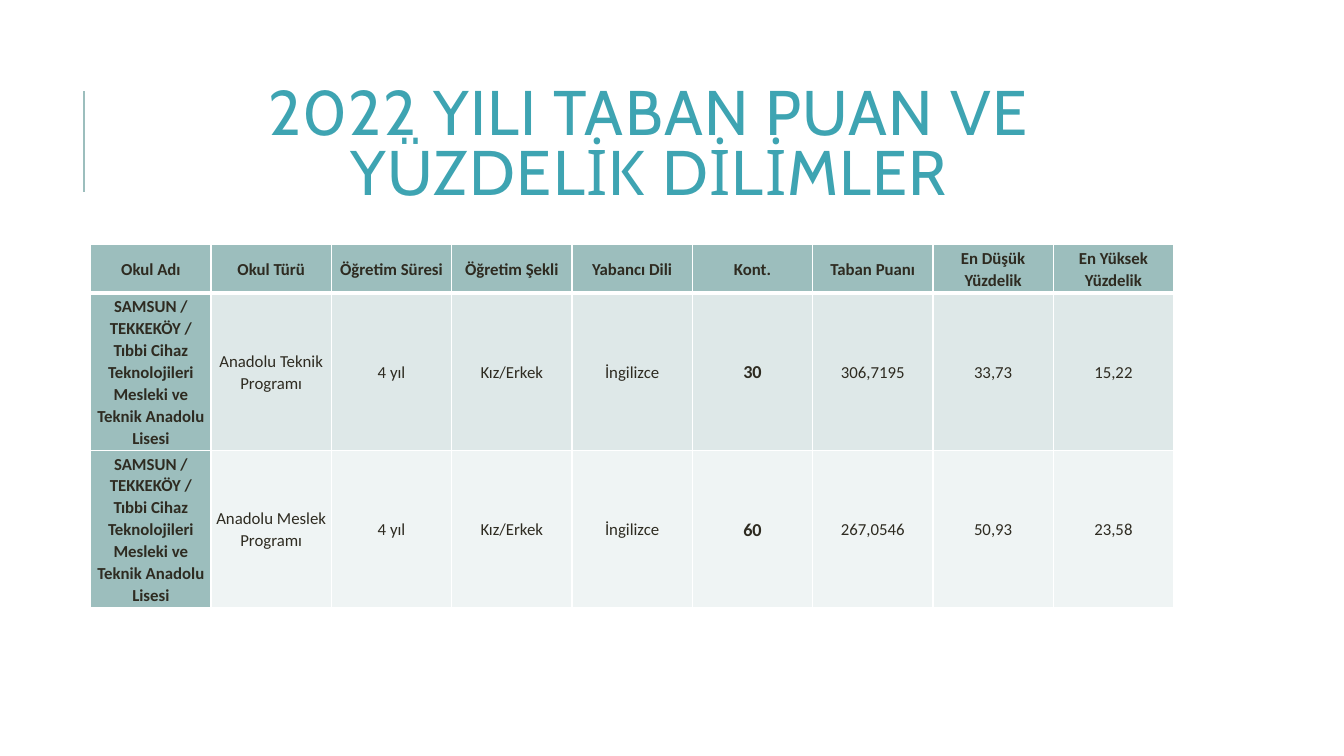
from lxml.etree import SubElement
from pptx import Presentation
from pptx.dml.color import RGBColor
from pptx.enum.shapes import MSO_CONNECTOR
from pptx.enum.text import MSO_ANCHOR, MSO_AUTO_SIZE, PP_ALIGN
from pptx.oxml.ns import qn
from pptx.util import Inches, Pt

COLORS = {
    "title": "3EA4B2",
    "accent": "9CBEBD",
    "text": "2E2B21",
    "border": "FFFFFF",
    "odd_row": "DEE8E8",
    "even_row": "EFF4F4",
}
SCHOOL = "SAMSUN / TEKKEKÖY / Tıbbi Cihaz Teknolojileri Mesleki ve Teknik Anadolu Lisesi"
ROWS = [
    ["Okul Adı", "Okul Türü", "Öğretim Süresi", "Öğretim Şekli", "Yabancı Dili",
     "Kont.", "Taban Puanı", "En Düşük Yüzdelik", "En Yüksek Yüzdelik"],
    [SCHOOL, "Anadolu Teknik Programı", "4 yıl", "Kız/Erkek", "İngilizce",
     "30", "306,7195", "33,73", "15,22"],
    [SCHOOL, "Anadolu Meslek Programı", "4 yıl", "Kız/Erkek", "İngilizce",
     "60", "267,0546", "50,93", "23,58"],
]
ROW_HEIGHTS = [0.49, 1.55, 1.55]
TABLE_WIDTH = 10.74
QUOTA_COLUMN = 5


def color(name):
    return RGBColor.from_string(COLORS[name])


def add_span(para, text, font_name, size, color_name, bold=False):
    span = para.add_run()
    span.text = text
    span.font.name = font_name
    span.font.size = Pt(size)
    span.font.bold = bold
    span.font.color.rgb = color(color_name)
    return span


def set_title(page, text):
    title = page.shapes.title
    title.left, title.top = Inches(1.12), Inches(0.64)
    title.width, title.height = Inches(10.63), Inches(1.64)
    frame = title.text_frame
    frame.word_wrap = True
    frame.auto_size = MSO_AUTO_SIZE.NONE
    frame.vertical_anchor = MSO_ANCHOR.MIDDLE
    para = frame.paragraphs[0]
    para.alignment = PP_ALIGN.CENTER
    para.line_spacing = 0.8
    span = add_span(para, text, "Cabin", 45, "title")
    span.font._element.set("spc", "100")


def add_title_rule(page):
    rule = page.shapes.add_connector(
        MSO_CONNECTOR.STRAIGHT, Inches(0.83), Inches(1.9), Inches(0.83), Inches(0.9))
    rule.line.color.rgb = color("accent")
    rule.line.width = Pt(1.5)
    SubElement(rule._element.spPr, qn("a:effectLst"))


def set_borders(cell, top, bottom):
    properties = cell._tc.get_or_add_tcPr()
    for side, width in (("L", 1), ("R", 1), ("T", top), ("B", bottom)):
        line = SubElement(properties, qn(f"a:ln{side}"), w=str(Pt(width)))
        fill = SubElement(line, qn("a:solidFill"))
        SubElement(fill, qn("a:srgbClr"), val=COLORS["border"])


def fill_cell(cell, text, row, column):
    is_header = row == 0
    set_borders(cell, top=3 if row == 1 else 1, bottom=3 if is_header else 1)
    cell.fill.solid()
    if is_header or column == 0:
        fill_name = "accent"
    else:
        fill_name = "odd_row" if row % 2 else "even_row"
    cell.fill.fore_color.rgb = color(fill_name)
    cell.margin_left = cell.margin_right = Inches(0.02)
    cell.margin_top = cell.margin_bottom = Inches(0.02)
    cell.vertical_anchor = MSO_ANCHOR.MIDDLE
    para = cell.text_frame.paragraphs[0]
    para.alignment = PP_ALIGN.CENTER
    para.line_spacing = 1.07
    if not is_header:
        para.space_after = Pt(7.5)
    is_quota = not is_header and column == QUOTA_COLUMN
    add_span(para, text, "Calibri", 13 if is_quota else 12, "text",
             bold=is_header or column in (0, QUOTA_COLUMN))


def add_score_table(page):
    column_count = len(ROWS[0])
    table = page.shapes.add_table(
        len(ROWS), column_count, Inches(0.9), Inches(2.42),
        Inches(TABLE_WIDTH), Inches(sum(ROW_HEIGHTS))).table
    table.first_col = True
    for column in table.columns:
        column.width = Inches(TABLE_WIDTH / column_count)
    for row, texts in enumerate(ROWS):
        table.rows[row].height = Inches(ROW_HEIGHTS[row])
        for column, text in enumerate(texts):
            fill_cell(table.cell(row, column), text, row, column)


def main():
    """Build the slide of 2022 base scores and percentiles."""
    deck = Presentation()
    deck.slide_width, deck.slide_height = Inches(13.33), Inches(7.5)
    page = deck.slides.add_slide(deck.slide_layouts[5])
    add_title_rule(page)
    set_title(page, "2022 YILI TABAN PUAN VE YÜZDELİK DİLİMLER")
    add_score_table(page)
    deck.save("out.pptx")


if __name__ == "__main__":
    main()
